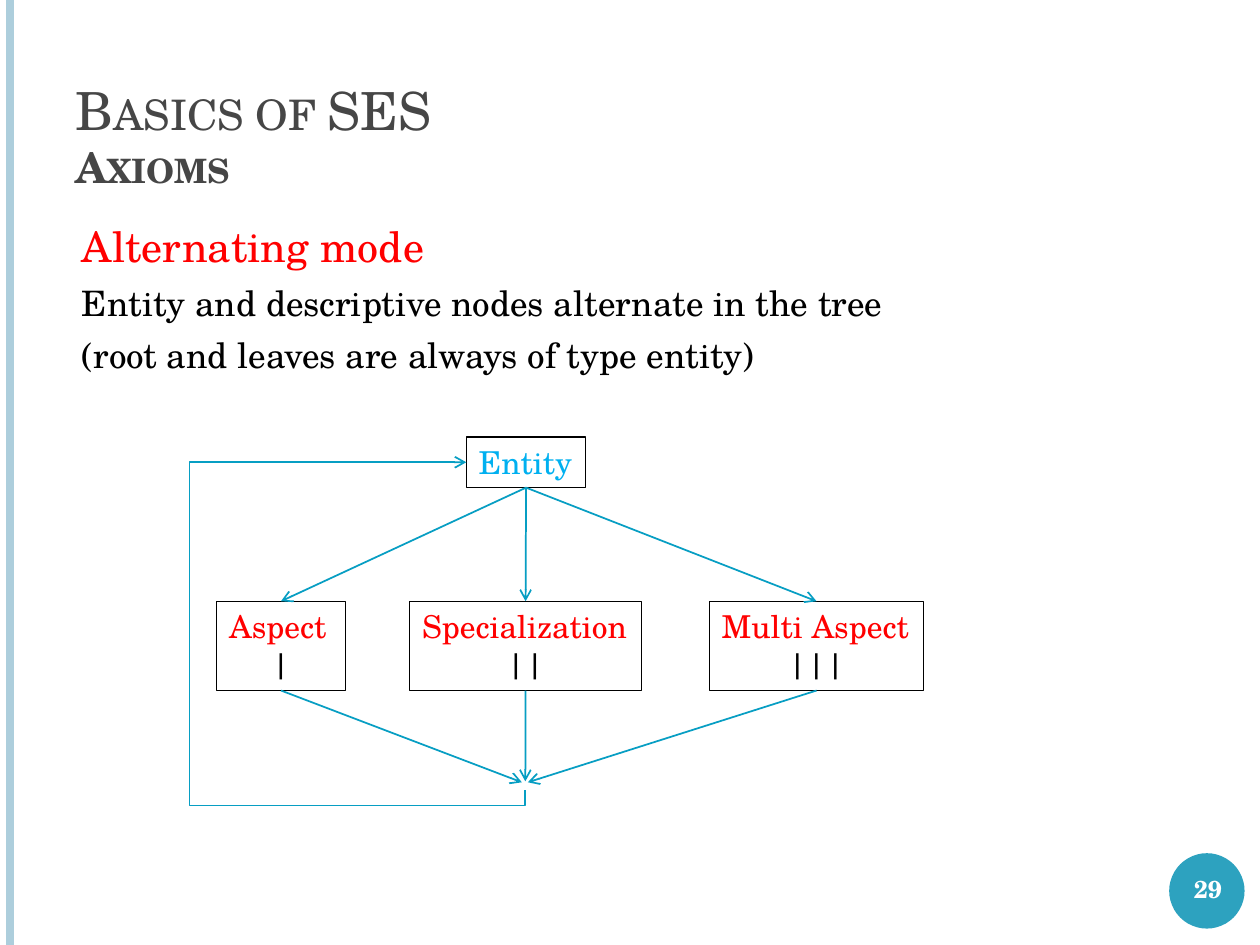
"""Build a slide on the alternating mode axiom of system entity structures."""
from lxml.etree import SubElement
from pptx import Presentation
from pptx.dml.color import RGBColor
from pptx.enum.shapes import MSO_CONNECTOR, MSO_SHAPE
from pptx.enum.text import MSO_ANCHOR, PP_ALIGN
from pptx.oxml.ns import qn
from pptx.util import Cm, Pt

FONT = "TeX Gyre Schola"
COLORS = {
    "bar": "ADCEDC",
    "badge": "2DA2BF",
    "arrow": "079EC3",
    "title": "464646",
    "entity": "00B0F0",
    "accent": "FF0000",
    "text": "000000",
    "white": "FFFFFF",
}
TOP, BOTTOM = 0, 2


def rgb(name):
    """Return the named palette colour."""
    return RGBColor.from_string(COLORS[name])


def write(paragraph, text, *, size=18, color="text", bold=False, small_caps=False,
          align=PP_ALIGN.LEFT, before=0):
    """Add formatted text to a paragraph."""
    paragraph.alignment = align
    paragraph.space_before = Pt(before)
    run = paragraph.add_run()
    run.text = text
    run.font.name = FONT
    run.font.size = Pt(size)
    run.font.bold = bold
    run.font.color.rgb = rgb(color)
    if small_caps:
        run.font._element.set("cap", "small")


def add_text_frame(slide, left, top, width, height, anchor=MSO_ANCHOR.TOP):
    """Add a wrapping text box and return its text frame."""
    box = slide.shapes.add_textbox(Cm(left), Cm(top), Cm(width), Cm(height))
    box.text_frame.word_wrap = True
    box.text_frame.vertical_anchor = anchor
    return box.text_frame


def add_node(slide, left, top, width, height, label, color, mark="", wrap=False):
    """Add an outlined tree node with a label and an optional mark below it."""
    node = slide.shapes.add_shape(MSO_SHAPE.RECTANGLE, Cm(left), Cm(top), Cm(width), Cm(height))
    node.shadow.inherit = False
    node.fill.background()
    node.line.color.rgb = rgb("text")
    node.line.width = Pt(0.75)
    frame = node.text_frame
    frame.word_wrap = wrap
    frame.vertical_anchor = MSO_ANCHOR.TOP
    write(frame.paragraphs[0], label, color=color)
    if mark:
        write(frame.add_paragraph(), mark, align=PP_ALIGN.CENTER)
    return node


def add_line(slide, start, end, color="arrow", width=1, kind=MSO_CONNECTOR.STRAIGHT, arrow=True):
    """Add a connector, by default with an open arrowhead at its end."""
    line = slide.shapes.add_connector(kind, *map(Cm, start + end))
    line.line.color.rgb = rgb(color)
    line.line.width = Pt(width)
    properties = line._element.spPr
    if arrow:
        SubElement(properties.find(qn("a:ln")), qn("a:tailEnd"), type="arrow")
    SubElement(properties, qn("a:effectLst"))
    return line


def add_return_arrow(slide):
    """Add the bent arrow that leads from the merge point back to the entity."""
    loop = add_line(slide, (6.69, 13.22), (13.3, 12.03), kind=MSO_CONNECTOR.ELBOW)
    properties = loop._element.spPr
    properties.find(qn("a:xfrm")).set("rot", "16200000")
    geometry = properties.find(qn("a:prstGeom"))
    geometry.set("prst", "bentConnector4")
    guides = geometry.find(qn("a:avLst"))
    if guides is None:
        guides = SubElement(geometry, qn("a:avLst"))
    for name, value in (("adj1", -4700), ("adj2", 568800)):
        SubElement(guides, qn("a:gd"), name=name, fmla=f"val {value}")


def add_decoration(slide):
    """Add the side bar and the page number badge."""
    add_line(slide, (0.2, 0), (0.2, 19.05), color="bar", width=4.5, arrow=False)
    badge = slide.shapes.add_shape(MSO_SHAPE.OVAL, Cm(23.57), Cm(17.2), Cm(1.52), Cm(1.52))
    badge.shadow.inherit = False
    badge.fill.solid()
    badge.fill.fore_color.rgb = rgb("badge")
    badge.line.fill.background()
    number = add_text_frame(slide, 23.5, 17.2, 1.7, 1.45, MSO_ANCHOR.MIDDLE)
    write(number.paragraphs[0], "29", size=14, color="white", bold=True, align=PP_ALIGN.CENTER)


def add_wording(slide):
    """Add the title and the statement of the axiom."""
    title = add_text_frame(slide, 1.27, 0.48, 21.82, 3.51, MSO_ANCHOR.BOTTOM).paragraphs[0]
    write(title, "Basics of SES", size=30, color="title", small_caps=True)
    title.add_line_break()
    write(title, "Axioms", size=24, color="title", bold=True, small_caps=True)

    body = add_text_frame(slide, 1.4, 4.32, 20.75, 13.54)
    write(body.paragraphs[0], "Alternating mode", size=24, color="accent")
    for statement in ("Entity and descriptive nodes alternate in the tree",
                      "(root and leaves are always of type entity)"):
        write(body.add_paragraph(), statement, size=20, before=6)


def add_diagram(slide):
    """Add the cycle between the entity and its descriptive nodes."""
    entity = add_node(slide, 9.4, 8.81, 2.41, 1.02, "Entity", "entity")
    descriptive = (
        ("Aspect", "|", 4.37, 2.59, True, (10.52, 15.77)),
        ("Specialization", "||", 8.26, 4.67, False, (10.59, 15.75)),
        ("Multi Aspect", "|||", 14.3, 4.32, False, (10.64, 15.77)),
    )
    for label, mark, left, width, wrap, merge in descriptive:
        node = add_node(slide, left, 12.12, width, 1.8, label, "accent", mark, wrap)
        middle = left + width / 2
        branch = add_line(slide, (10.6, 9.83), (middle, 12.12))
        branch.begin_connect(entity, BOTTOM)
        branch.end_connect(node, TOP)
        add_line(slide, (middle, 13.92), merge).begin_connect(node, BOTTOM)
    add_return_arrow(slide)


def main():
    """Create and save the presentation."""
    presentation = Presentation()
    presentation.slide_width, presentation.slide_height = Cm(25.4), Cm(19.05)
    slide = presentation.slides.add_slide(presentation.slide_layouts[6])
    add_decoration(slide)
    add_wording(slide)
    add_diagram(slide)
    presentation.save("out.pptx")


if __name__ == "__main__":
    main()
